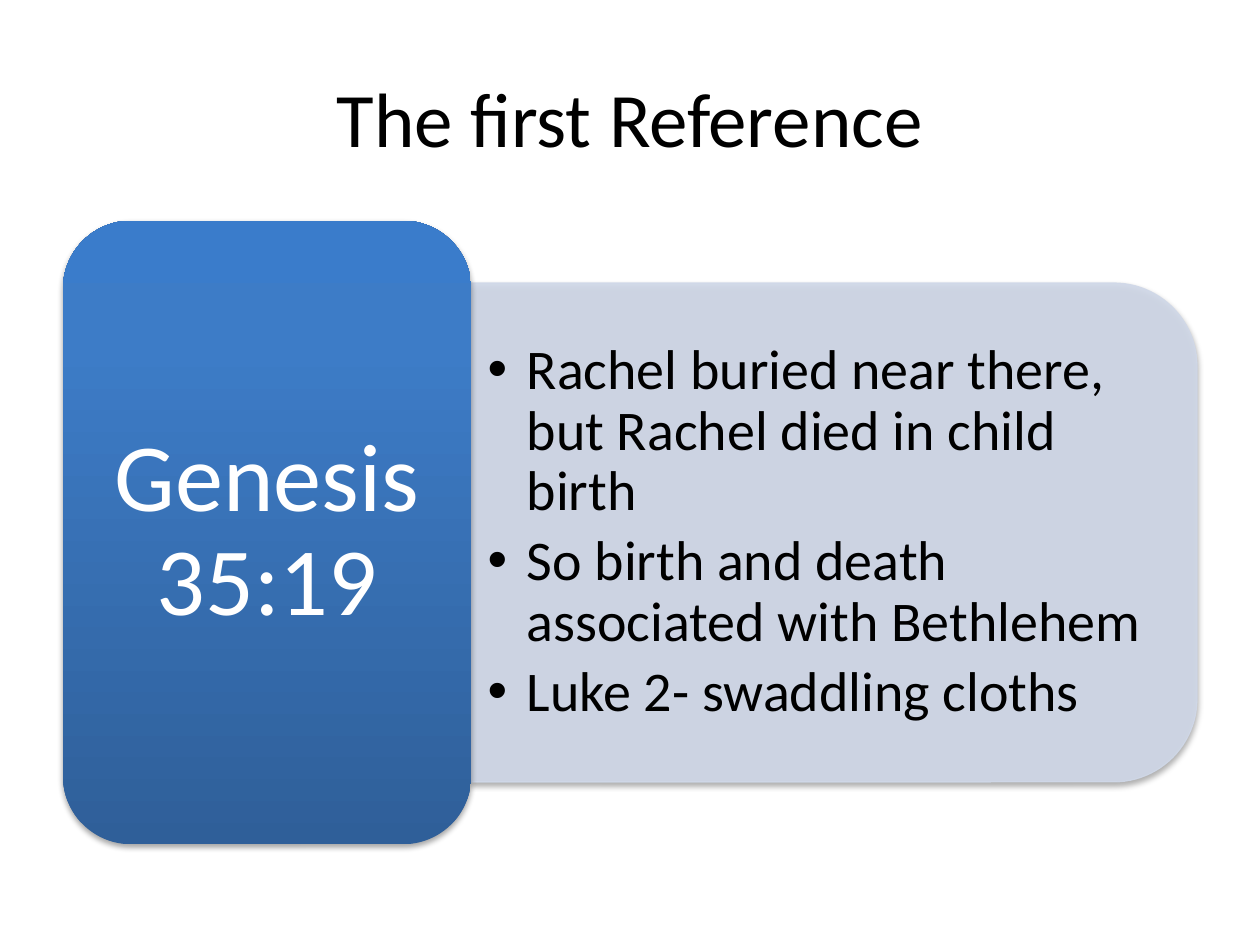
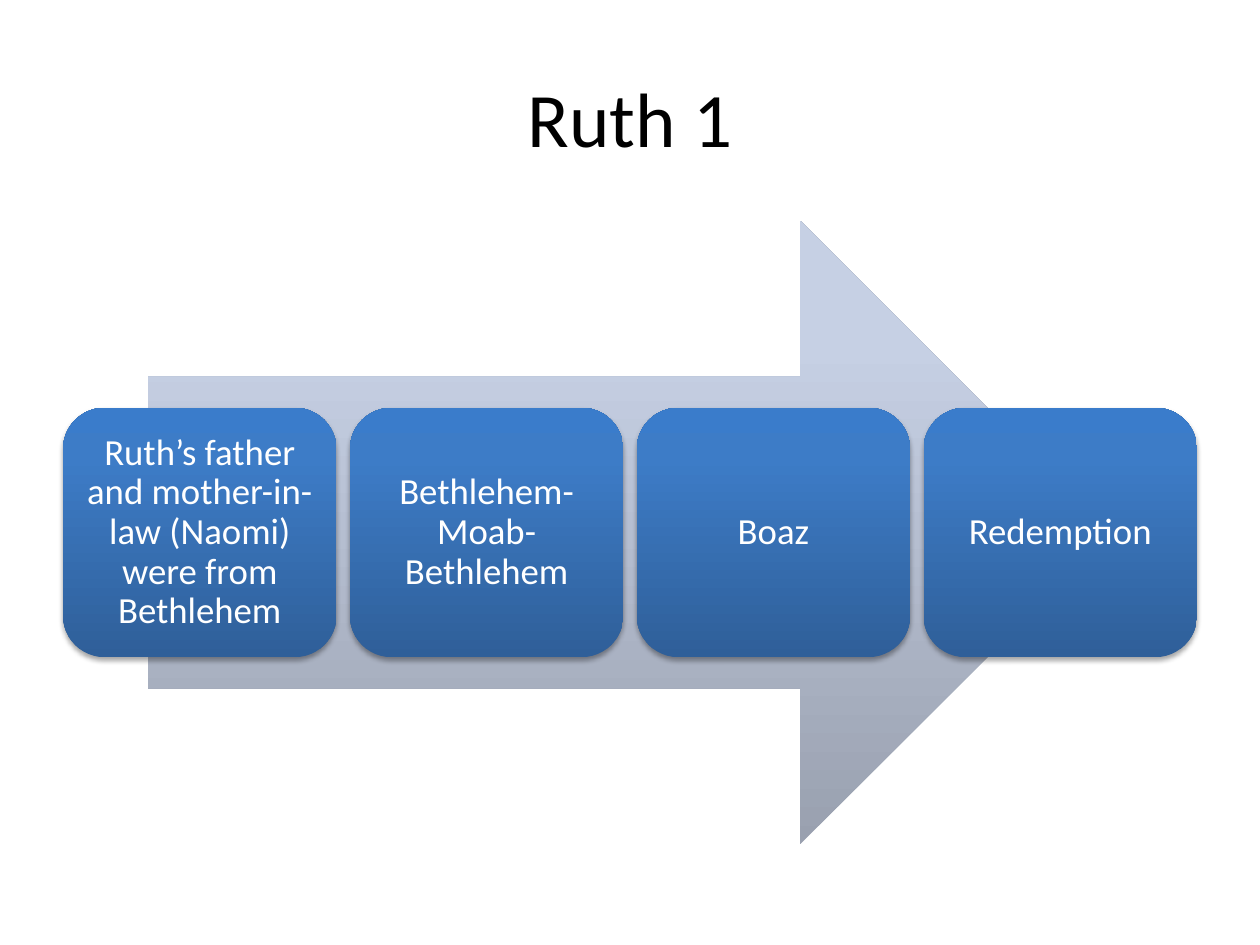
from collections import namedtuple

from lxml.etree import SubElement
from pptx import Presentation
from pptx.dml.color import RGBColor
from pptx.enum.shapes import MSO_SHAPE as Preset
from pptx.enum.text import MSO_ANCHOR as Anchor, PP_ALIGN as Align
from pptx.oxml.ns import qn
from pptx.util import Cm, Pt

# Shared style
Box = namedtuple("Box", "left top width height")
FONT = "Calibri"
BLACK, WHITE = "000000", "FFFFFF"
PANEL = "D0D8E8"
BLUE_STOPS = [(0, "2F5F99"), (80, "3D7CC7"), (100, "3A7CCB")]
ARROW_STOPS = [(0, "99A0AF"), (80, "C6D0E4"), (100, "C7D1E5")]
TITLE_BOX = Box(1.27, 0.76, 22.86, 3.18)
BODY_BOX = Box(1.27, 4.45, 22.86, 12.57)


def colour(hex_code):
    return RGBColor.from_string(hex_code)


def lengths(box):
    return [Cm(value) for value in box]


def add_xml(parent, tag, **attributes):
    return SubElement(parent, qn(tag), {k: str(v) for k, v in attributes.items()})


def set_gradient(shape, stops):
    """Fill from bottom to top with (percent, hex) stops."""
    shape.fill.gradient()
    shape.fill.gradient_angle = 90
    stop_list = shape._element.spPr.find(".//" + qn("a:gsLst"))
    stop_list.clear()
    for percent, hex_code in stops:
        stop = add_xml(stop_list, "a:gs", pos=percent * 1000)
        add_xml(stop, "a:srgbClr", val=hex_code)


def add_shadow(shape):
    effects = shape._element.spPr.find(qn("a:effectLst"))
    shadow = add_xml(effects, "a:outerShdw", blurRad=Pt(3.1), dist=Pt(1.8),
                     dir=90 * 60000, rotWithShape=0)
    shade = add_xml(shadow, "a:srgbClr", val=BLACK)
    add_xml(shade, "a:alpha", val=35000)


def add_plain_shape(slide, preset, box):
    shape = slide.shapes.add_shape(preset, *lengths(box))
    shape.shadow.inherit = False
    shape.line.fill.background()
    return shape


def format_text(frame, size, hex_code, align, margins=None, line_spacing=None):
    frame.word_wrap = True
    frame.vertical_anchor = Anchor.MIDDLE
    if margins:
        side, end = margins
        frame.margin_left = frame.margin_right = Cm(side)
        frame.margin_top = frame.margin_bottom = Cm(end)
    for paragraph in frame.paragraphs:
        paragraph.alignment = align
        paragraph.line_spacing = line_spacing
        for run in paragraph.runs:
            run.font.name, run.font.size = FONT, Pt(size)
            run.font.color.rgb = colour(hex_code)


def add_titled_slide(deck, heading):
    slide = deck.slides.add_slide(deck.slide_layouts[5])
    title = slide.shapes.title
    title.left, title.top, title.width, title.height = lengths(TITLE_BOX)
    title.text_frame.text = heading
    format_text(title.text_frame, 44, BLACK, Align.CENTER)
    return slide


def add_card(slide, box, label, size, margins):
    card = add_plain_shape(slide, Preset.ROUNDED_RECTANGLE, box)
    set_gradient(card, BLUE_STOPS)
    add_shadow(card)
    card.text_frame.text = label
    format_text(card.text_frame, size, WHITE, Align.CENTER, margins, 0.9)


def add_points_panel(slide, box, points):
    """Panel with rounded right corners and a bulleted list."""
    # The preset is rounded on top, so it is drawn upright and turned
    upright = Box(box.left + (box.width - box.height) / 2,
                  box.top + (box.height - box.width) / 2, box.height, box.width)
    panel = add_plain_shape(slide, Preset.ROUND_2_SAME_RECTANGLE, upright)
    panel.rotation = 90
    panel.fill.solid()
    panel.fill.fore_color.rgb = colour(PANEL)
    panel.line.color.rgb = colour(PANEL)
    panel.line.width = Pt(0.75)
    for tint in panel._element.spPr.iter(qn("a:srgbClr")):
        add_xml(tint, "a:alpha", val=90000)
    add_shadow(panel)

    # Bulleted text
    inset = 0.49
    text_box = Box(box.left, box.top + inset, box.width - inset, box.height - 2 * inset)
    frame = slide.shapes.add_textbox(*lengths(text_box)).text_frame
    frame.text = "\n".join(points)
    format_text(frame, 32, BLACK, Align.LEFT, (0.33, 0.18), 0.9)
    for paragraph in frame.paragraphs:
        paragraph.space_after = Pt(5.5)
        properties = paragraph._p.get_or_add_pPr()
        properties.set("marL", str(Cm(0.79)))
        properties.set("indent", str(-Cm(0.79)))
        add_xml(properties, "a:buFont", typeface="Arial")
        add_xml(properties, "a:buChar", char="•")


def add_reference(slide, box, reference, points):
    """Reference card on the left, its points on the right."""
    card_width = box.width * 0.36
    panel_box = Box(box.left + card_width, box.top + box.height * 0.1,
                    box.width - card_width, box.height * 0.8)
    add_points_panel(slide, panel_box, points)
    add_card(slide, box._replace(width=card_width), reference, 55, (0.58, 0.29))


def add_story_arrow(slide, box, steps):
    """Row of step cards across a wide arrow."""
    arrow_box = box._replace(left=box.left + box.width * 0.075, width=box.width * 0.85)
    arrow = add_plain_shape(slide, Preset.RIGHT_ARROW, arrow_box)
    set_gradient(arrow, ARROW_STOPS)

    gap = 0.27
    width = (box.width - gap * (len(steps) - 1)) / len(steps)
    for index, step in enumerate(steps):
        step_box = Box(box.left + index * (width + gap), box.top + box.height * 0.3,
                       width, box.height * 0.4)
        add_card(slide, step_box, step, 21, (0.23, 0.23))


def main():
    deck = Presentation()
    deck.slide_width, deck.slide_height = Cm(25.4), Cm(19.05)

    # Slide 1: first reference
    first_reference = add_titled_slide(deck, "The first Reference")
    add_reference(first_reference, BODY_BOX, "Genesis 35:19", [
        "Rachel buried near there, but Rachel died in child birth",
        "So birth and death associated with Bethlehem",
        "Luke 2- swaddling cloths",
    ])

    # Slide 2: the story of Ruth
    ruth = add_titled_slide(deck, "Ruth 1")
    add_story_arrow(ruth, BODY_BOX, [
        "Ruth’s father and mother-in-law (Naomi) were from Bethlehem",
        "Bethlehem-Moab-Bethlehem",
        "Boaz",
        "Redemption",
    ])

    deck.save("out.pptx")


if __name__ == "__main__":
    main()
